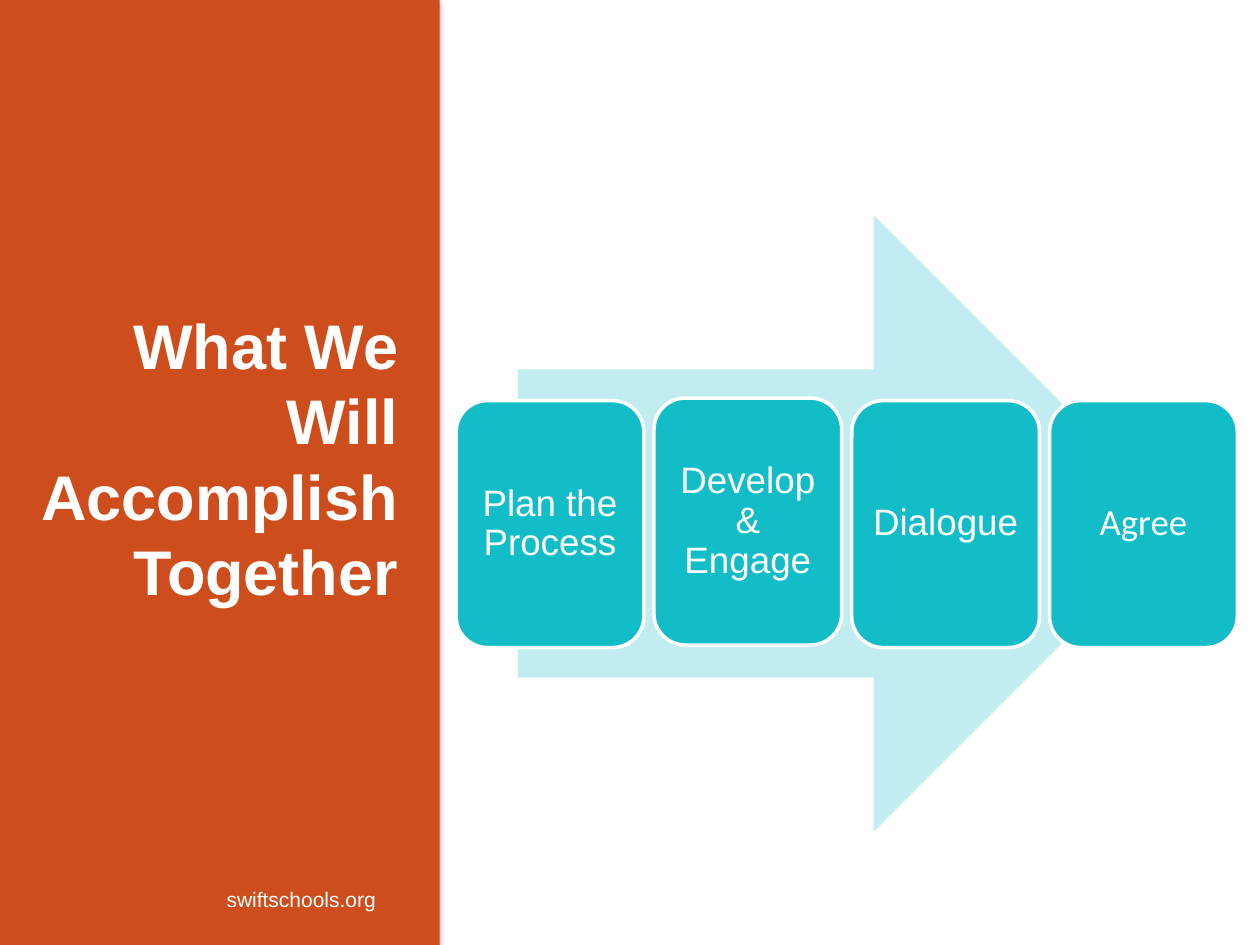
from lxml import etree
from pptx import Presentation
from pptx.dml.color import RGBColor
from pptx.enum.shapes import MSO_SHAPE
from pptx.enum.text import MSO_ANCHOR, PP_ALIGN
from pptx.oxml import parse_xml
from pptx.oxml.ns import nsdecls, qn
from pptx.util import Inches, Pt

RECTANGLE, ROUNDED, ARROW = (
    MSO_SHAPE.RECTANGLE, MSO_SHAPE.ROUNDED_RECTANGLE, MSO_SHAPE.RIGHT_ARROW)
LEFT, CENTER, RIGHT = PP_ALIGN.LEFT, PP_ALIGN.CENTER, PP_ALIGN.RIGHT
TOP, MIDDLE = MSO_ANCHOR.TOP, MSO_ANCHOR.MIDDLE

# Content
TITLE = "What We Will Accomplish Together"
WEBSITE = "swiftschools.org"
STEPS = [  # text, font, top
    ("Plan the Process", "Arial", 3.18),
    ("Develop & Engage", "Arial", 3.16),
    ("Dialogue", "Arial", 3.18),
    ("Agree", "Calibri", 3.18),
]

# Colours and step layout
ORANGE, TEAL, WHITE = "CD4E1C", "13BDC8", "FFFFFF"
STEP_LEFT, STEP_WIDTH, STEP_HEIGHT, STEP_PITCH = 3.62, 1.49, 1.96, 1.57


def color(hex_value):
    return RGBColor.from_string(hex_value)


def add_block(slide, kind, box, fill, line=None):
    shape = slide.shapes.add_shape(kind, *map(Inches, box))
    shape.shadow.inherit = False
    shape.fill.solid()
    shape.fill.fore_color.rgb = color(fill)
    if line:
        shape.line.color.rgb = color(line)
        shape.line.width = Pt(2)
    else:
        shape.line.fill.background()
    return shape


def write(shape, text, size, font="Arial", bold=False, align=LEFT,
          anchor=TOP, spacing=None, margin=None):
    frame = shape.text_frame
    frame.word_wrap = True
    frame.vertical_anchor = anchor
    if margin is not None:
        frame.margin_left = frame.margin_right = Inches(margin)
        frame.margin_top = frame.margin_bottom = Inches(margin)
    paragraph = frame.paragraphs[0]
    paragraph.alignment = align
    paragraph.line_spacing = spacing
    run = paragraph.add_run()
    run.text = text
    run.font.size = Pt(size)
    run.font.name = font
    run.font.bold = bold
    run.font.color.rgb = color(WHITE)


def main():
    presentation = Presentation()
    presentation.slide_width, presentation.slide_height = Inches(10), Inches(7.5)
    slide = presentation.slides.add_slide(presentation.slide_layouts[5])

    # Side panel with a soft shadow, behind the title
    panel = add_block(slide, RECTANGLE, (0, 0, 3.49, 7.5), ORANGE)
    effects = panel.element.spPr.find(qn("a:effectLst"))
    effects.append(parse_xml(
        f'<a:outerShdw {nsdecls("a")} blurRad="{Pt(3.1)}" dist="{Pt(1.8)}" '
        'dir="5400000" rotWithShape="0"><a:srgbClr val="000000">'
        '<a:alpha val="35000"/></a:srgbClr></a:outerShdw>'))

    title = slide.shapes.title
    title.element.addprevious(panel.element)
    title.left, title.top, title.width, title.height = map(
        Inches, (0.07, 2.37, 3.19, 2.52))
    write(title, TITLE, 36, bold=True, align=RIGHT, anchor=MIDDLE)

    # Pale arrow behind the steps
    arrow = add_block(slide, ARROW, (4.11, 1.71, 5.27, 4.89), TEAL)
    tint = arrow.element.spPr.find(qn("a:solidFill"))[0]
    etree.SubElement(tint, qn("a:alpha"), val="26000")

    # Steps
    for index, (text, font, top) in enumerate(STEPS):
        left = STEP_LEFT + index * STEP_PITCH
        step = add_block(slide, ROUNDED, (left, top, STEP_WIDTH, STEP_HEIGHT),
                         TEAL, line=WHITE)
        write(step, text, 21, font=font, align=CENTER, anchor=MIDDLE,
              spacing=0.9, margin=0.09)

    # Web address
    website = slide.shapes.add_textbox(*map(Inches, (1.7, 6.99, 1.99, 0.3)))
    write(website, WEBSITE, 12)

    presentation.save("out.pptx")


if __name__ == "__main__":
    main()
